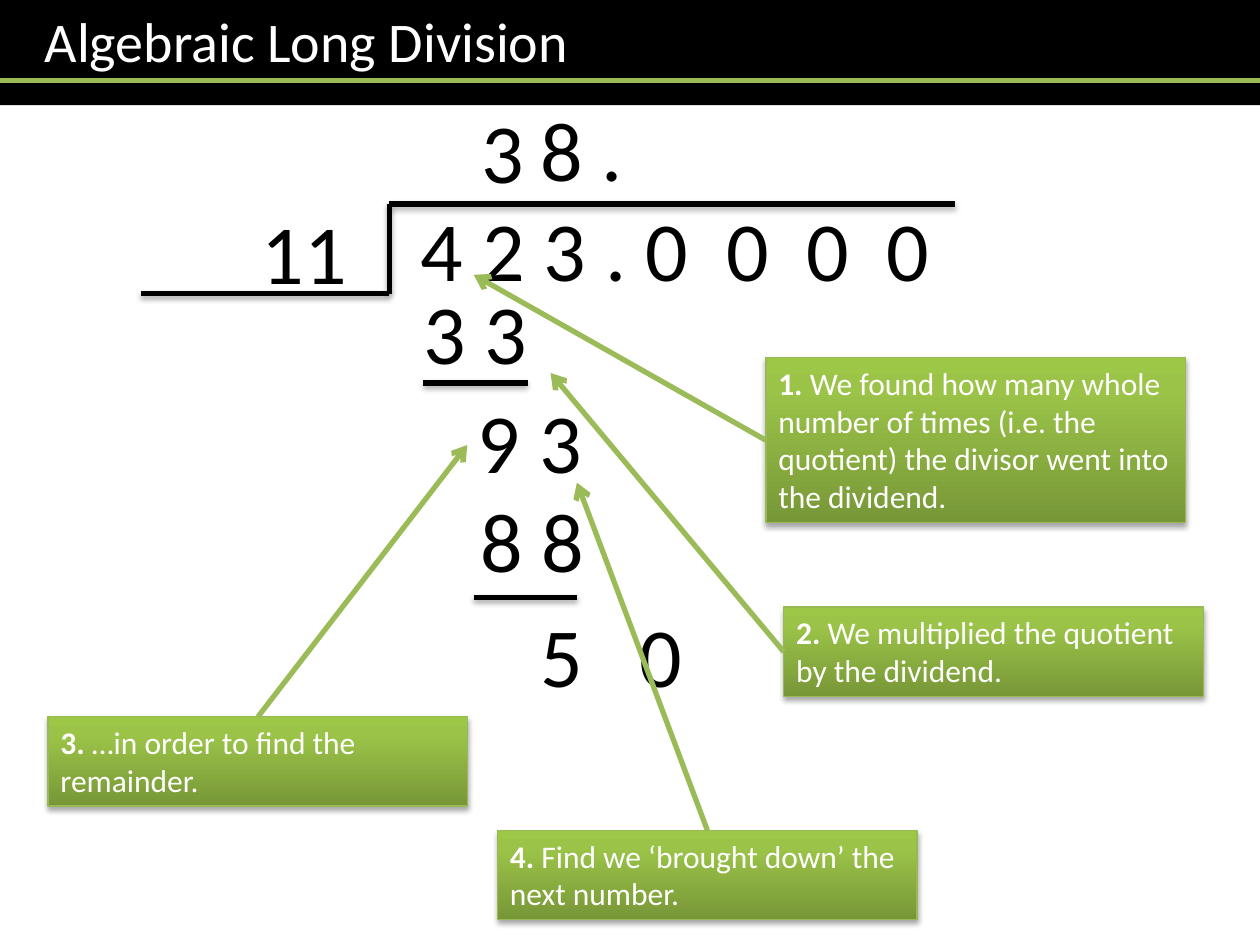
"""Build the Algebraic Long Division slide."""
from dataclasses import dataclass
from typing import Any, NamedTuple

import lxml.etree
import pptx
import pptx.dml.color
import pptx.enum.dml
import pptx.enum.shapes
import pptx.enum.text
import pptx.oxml.ns
import pptx.util

Cm = pptx.util.Cm
qn = pptx.oxml.ns.qn


@dataclass(frozen=True)
class Theme:
    font: str = "Calibri"
    ink: str = "000000"
    paper: str = "FFFFFF"
    accent: str = "9BBB59"
    edge: str = "98B955"
    gradient: tuple = ((0, "779737"), (80, "9BC348"), (100, "9DC746"))
    title_size: int = 32
    digit_size: int = 48
    note_size: int = 18
    rule_width: float = 3
    edge_width: float = 0.75


class Digits(NamedTuple):
    text: str
    left: float
    top: float
    width: float
    indent: float = 0
    tabs: tuple = ()


class Rule(NamedTuple):
    start: tuple
    end: tuple


class Callout(NamedTuple):
    number: str
    text: str
    left: float
    top: float
    height: float
    site: int
    target: tuple


THEME = Theme()
PAGE_WIDTH, PAGE_HEIGHT = 25.4, 19.05
BAND_HEIGHT, BAND_RULE = 1.68, 1.63
DIGIT_HEIGHT, NOTE_WIDTH = 2.31, 8.46
INSET, INDENT = 0.25, 1.15
TOP_SITE, LEFT_SITE = 0, 1
CORNER, FOOT = (7.85, 4.11), (7.85, 5.92)

DIGITS = (
    Digits("4 2 3 . 0\t0\t0\t0", 8.23, 3.86, 11, tabs=(6.16, 7.78, 9.4)),
    Digits("11", 5.03, 3.91, 2.79),
    Digits("3", 9.45, 1.88, 1.4),
    Digits("3 3", 8.28, 5.54, 3.38),
    Digits("9 3", 8.23, 7.72, 4.42, INDENT),
    Digits("8 .", 10.64, 1.85, 3.07),
    Digits("8 8", 8.28, 9.73, 4.42, INDENT),
    Digits("5\t0", 10.64, 12.04, 4.8, tabs=(2.01,)),
)
RULES = (
    Rule((2.84, 5.92), FOOT),
    Rule(FOOT, CORNER),
    Rule(CORNER, (19.25, 4.11)),
    Rule((8.53, 7.72), (10.64, 7.72)),
    Rule((9.55, 12.04), (11.63, 12.04)),
)
CALLOUTS = (
    Callout("1. ", "We found how many whole number of times (i.e. the quotient) "
            "the divisor went into the dividend.", 15.44, 7.21, 3.33, LEFT_SITE, (9.55, 5.54)),
    Callout("2. ", "We multiplied the quotient by the dividend.",
            15.8, 12.24, 1.8, LEFT_SITE, (11.1, 7.52)),
    Callout("3. ", "…in order to find the remainder.",
            0.97, 14.45, 1.8, TOP_SITE, (9.42, 8.97)),
    Callout("4. ", "Find we ‘brought down’ the next number.",
            10.03, 16.74, 1.8, TOP_SITE, (11.63, 9.73)),
)


def rgb(value: str) -> pptx.dml.color.RGBColor:
    """Turn a hex string into a colour."""
    return pptx.dml.color.RGBColor.from_string(value)


def apply(target: Any, values: dict) -> None:
    """Set each named attribute on the target."""
    for name, value in values.items():
        setattr(target, name, value)


def add_node(parent: Any, tag: str, **attributes: Any) -> Any:
    """Append a DrawingML element."""
    values = {name: str(value) for name, value in attributes.items()}
    return lxml.etree.SubElement(parent, qn(f"a:{tag}"), values)


def set_effects(shape: Any, shadow: bool) -> None:
    """Give the shape a soft drop shadow or none at all."""
    effects = add_node(shape._element.spPr, "effectLst")
    if shadow:
        outer = add_node(effects, "outerShdw", blurRad=40000, dist=23000,
                         dir=5400000, rotWithShape=0)
        add_node(add_node(outer, "srgbClr", val=THEME.ink), "alpha", val=35000)


def add_span(para: Any, text: str, size: int, color: str, bold: bool = False) -> None:
    """Add one formatted run."""
    span = para.add_run()
    span.text = text
    apply(span.font, {"name": THEME.font, "size": pptx.util.Pt(size), "bold": bold})
    span.font.color.rgb = rgb(color)


def format_frame(frame: Any, **extra: Any) -> Any:
    """Set up a text frame and return its first paragraph."""
    apply(frame, {"word_wrap": True,
                  "auto_size": pptx.enum.text.MSO_AUTO_SIZE.SHAPE_TO_FIT_TEXT,
                  "vertical_anchor": pptx.enum.text.MSO_ANCHOR.TOP, **extra})
    para = frame.paragraphs[0]
    para.alignment = pptx.enum.text.PP_ALIGN.LEFT
    return para


def add_line(page: Any, start: tuple, end: tuple, color: str, shadow: bool = False,
             arrow: bool = False) -> Any:
    """Draw a straight connector between two points."""
    line = page.shapes.add_connector(pptx.enum.shapes.MSO_CONNECTOR.STRAIGHT,
                                     *map(Cm, start + end))
    line.line.color.rgb = rgb(color)
    line.line.width = pptx.util.Pt(THEME.rule_width)
    if arrow:
        add_node(line._element.spPr.find(qn("a:ln")), "tailEnd", type="arrow")
    set_effects(line, shadow)
    return line


def add_digits(page: Any, digits: Digits) -> None:
    """Write one row of the division."""
    box = page.shapes.add_textbox(Cm(digits.left), Cm(digits.top),
                                  Cm(digits.width), Cm(DIGIT_HEIGHT))
    para = format_frame(box.text_frame, margin_left=Cm(INSET + digits.indent))
    if digits.tabs:
        stops = add_node(para._p.get_or_add_pPr(), "tabLst")
        for stop in digits.tabs:
            add_node(stops, "tab", pos=int(Cm(stop)), algn="l")
    add_span(para, digits.text, THEME.digit_size, THEME.ink)


def add_callout(page: Any, note: Callout) -> None:
    """Draw a gradient note box with an arrow to its target."""
    box = page.shapes.add_shape(pptx.enum.shapes.MSO_SHAPE.RECTANGLE, Cm(note.left),
                                Cm(note.top), Cm(NOTE_WIDTH), Cm(note.height))
    box.fill.gradient()
    box.fill.gradient_angle = 90
    stops = box._element.spPr.find(".//" + qn("a:gsLst"))
    stops[:] = []
    for position, color in THEME.gradient:
        add_node(add_node(stops, "gs", pos=position * 1000), "srgbClr", val=color)
    box.line.color.rgb = rgb(THEME.edge)
    box.line.width = pptx.util.Pt(THEME.edge_width)
    set_effects(box, shadow=True)
    para = format_frame(box.text_frame)
    add_span(para, note.number, THEME.note_size, THEME.paper, bold=True)
    add_span(para, note.text, THEME.note_size, THEME.paper)
    arrow = add_line(page, (note.left, note.top), note.target, THEME.accent, arrow=True)
    arrow.begin_connect(box, note.site)


def add_title(page: Any, text: str) -> None:
    """Turn the title placeholder into the heading band."""
    title = page.shapes.title
    apply(title, {"left": 0, "top": 0, "width": Cm(PAGE_WIDTH), "height": Cm(BAND_HEIGHT)})
    title.fill.solid()
    title.fill.fore_color.rgb = rgb(THEME.ink)
    para = format_frame(title.text_frame, margin_left=Cm(0.9))
    add_span(para, text, THEME.title_size, THEME.paper)
    add_line(page, (0, BAND_RULE), (PAGE_WIDTH, BAND_RULE), THEME.accent)


def main() -> None:
    """Build and save the deck."""
    deck = pptx.Presentation()
    apply(deck, {"slide_width": Cm(PAGE_WIDTH), "slide_height": Cm(PAGE_HEIGHT)})
    page = deck.slides.add_slide(deck.slide_layouts[5])
    add_title(page, "Algebraic Long Division")
    for rule in RULES:
        add_line(page, rule.start, rule.end, THEME.ink, shadow=True)
    for digits in DIGITS:
        add_digits(page, digits)
    for note in CALLOUTS:
        add_callout(page, note)
    deck.save("out.pptx")


if __name__ == "__main__":
    main()
